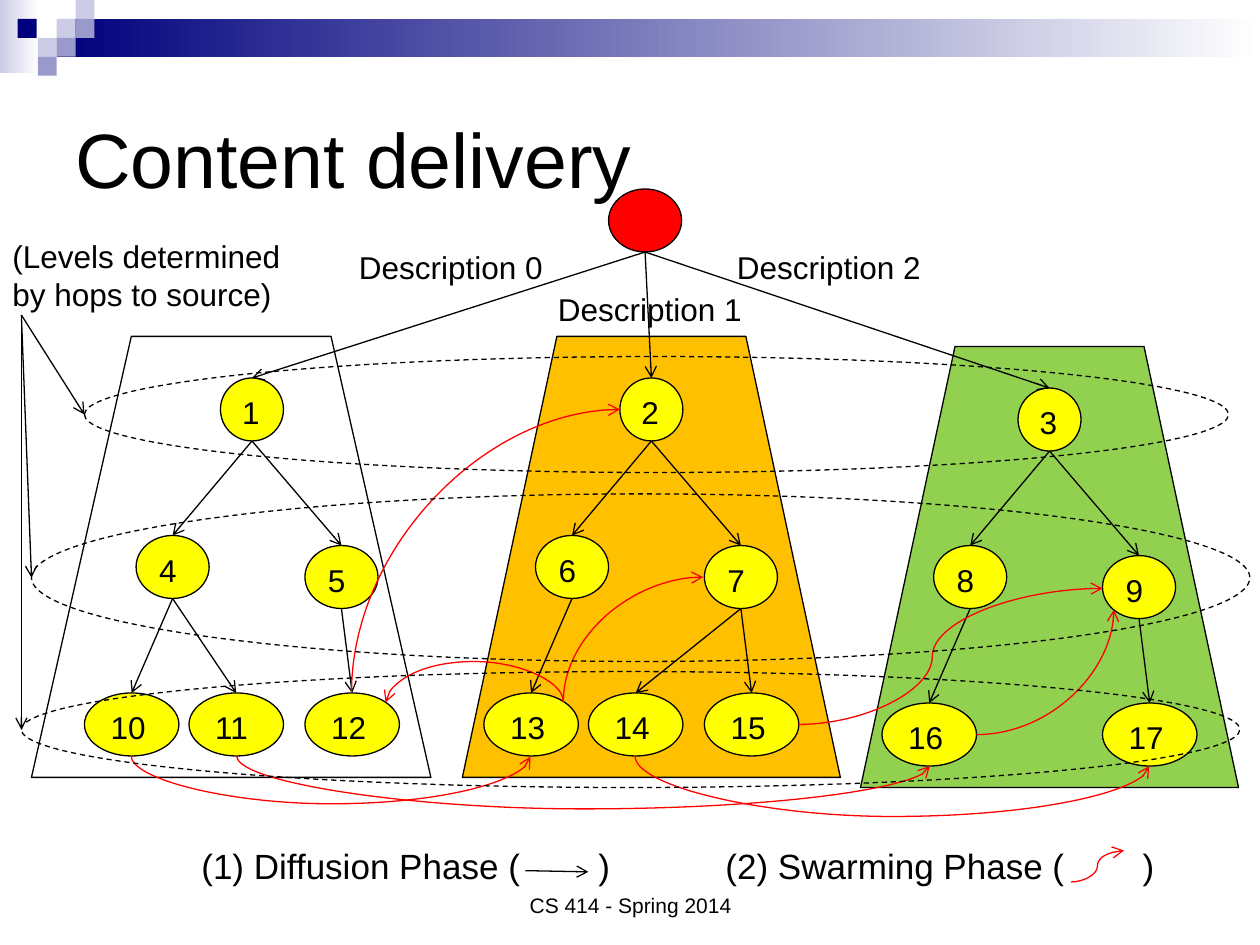
from lxml import etree
from pptx import Presentation
from pptx.dml.color import RGBColor
from pptx.enum.dml import MSO_LINE
from pptx.enum.shapes import MSO_CONNECTOR, MSO_SHAPE
from pptx.enum.text import MSO_ANCHOR, PP_ALIGN
from pptx.oxml.ns import qn
from pptx.util import Inches, Pt

RECT, OVAL, TRAPEZOID = MSO_SHAPE.RECTANGLE, MSO_SHAPE.OVAL, MSO_SHAPE.TRAPEZOID
STRAIGHT, CURVE = MSO_CONNECTOR.STRAIGHT, MSO_CONNECTOR.CURVE
TOP, MIDDLE, BOTTOM = MSO_ANCHOR.TOP, MSO_ANCHOR.MIDDLE, MSO_ANCHOR.BOTTOM
LEFT, CENTER = PP_ALIGN.LEFT, PP_ALIGN.CENTER
DASH = MSO_LINE.DASH

COLORS = {
    "black": "000000", "white": "FFFFFF", "red": "FF0000", "yellow": "FFFF00",
    "orange": "FFC000", "green": "92D050",
    "navy": "00007D", "lilac": "CCCCE6", "violet": "9999CC",
}


def rgb(name):
    return RGBColor.from_string(COLORS[name])


def write(tf, text, size=18, align=LEFT, anchor=TOP, wrap=True, tabs=()):
    tf.word_wrap = wrap
    tf.vertical_anchor = anchor
    p = tf.paragraphs[0]
    p.alignment = align
    if tabs:
        stops = etree.SubElement(p._p.get_or_add_pPr(), qn("a:tabLst"))
        for pos in tabs:
            etree.SubElement(stops, qn("a:tab"), pos=str(Inches(pos)), algn="l")
    r = p.add_run()
    r.text = text
    r.font.name, r.font.size = "Arial", Pt(size)
    r.font.color.rgb = rgb("black")


class Canvas:
    """The current slide and the style of what is drawn on it."""
    line_width = Pt(0.75)

    def __init__(self, slide):
        self.shapes = slide.shapes

    def shape(self, kind, x, y, w, h, fill=None, line="black", dash=None):
        s = self.shapes.add_shape(kind, Inches(x), Inches(y), Inches(w), Inches(h))
        s.shadow.inherit = False
        if fill:
            s.fill.solid()
            s.fill.fore_color.rgb = rgb(fill)
        else:
            s.fill.background()
        if line:
            s.line.color.rgb = rgb(line)
            s.line.width = self.line_width
        else:
            s.line.fill.background()
        if dash:
            s.line.dash_style = dash
        return s

    def gradient(self, x, y, w, h, start, end):
        s = self.shape(RECT, x, y, w, h, line=None)
        s.fill.gradient()
        s.fill.gradient_angle = 0
        for stop, name in zip(s.fill.gradient_stops, (start, end)):
            stop.color.rgb = rgb(name)

    def text(self, x, y, w, h, text, **fmt):
        s = self.shapes.add_textbox(Inches(x), Inches(y), Inches(w), Inches(h))
        write(s.text_frame, text, **fmt)

    def node(self, x, y, w, label):
        s = self.shape(OVAL, x, y, w, 0.5, "yellow")
        write(s.text_frame, label)
        return s

    def arrow(self, start, end, color="black", kind=STRAIGHT):
        c = self.shapes.add_connector(kind, *(Inches(v) for v in (*start, *end)))
        c.line.color.rgb = rgb(color)
        c.line.width = self.line_width
        etree.SubElement(c.line._get_or_add_ln(), qn("a:tailEnd"), type="arrow")
        etree.SubElement(c._element.spPr, qn("a:effectLst"))
        return c

    def link(self, parent, child):
        """Straight arrow from the bottom of parent to the top of child."""
        start = (parent.left + parent.width / 2, parent.top + parent.height)
        end = (child.left + child.width / 2, child.top)
        c = self.arrow(*([v / Inches(1) for v in pt] for pt in (start, end)))
        c.end_connect(child, 0)

    def curve(self, start, end, vertical=False, reach=None, bend=False):
        """Red curve; reach is how far it runs before turning, bend turns once."""
        (x1, y1), (x2, y2) = start, end
        run = x2 - x1
        if vertical:
            # Lay the curve out sideways, then turn it by 90 degrees.
            run, rise = (y2 - y1) or 0.01, x1 - x2
            cx, cy = (x1 + x2) / 2, (y1 + y2) / 2
            start = (cx - run / 2, cy - rise / 2)
            end = (cx + run / 2, cy + rise / 2)
        c = self.arrow(start, end, "red", CURVE)
        sp_pr = c._element.spPr
        if vertical:
            sp_pr.find(qn("a:xfrm")).set("rot", "5400000")
        geom = sp_pr.find(qn("a:prstGeom"))
        if bend:
            geom.set("prst", "curvedConnector2")
        elif reach:
            etree.SubElement(geom.find(qn("a:avLst")), qn("a:gd"), name="adj1",
                             fmla=f"val {round(reach / run * 100000)}")


def draw_header(cv):
    cv.gradient(0, 0, 0.31, 0.58, "lilac", "white")
    cv.gradient(0.45, 0.15, 9.55, 0.3, "navy", "white")
    for x, y, fill in [(0.45, 0.15, "lilac"), (0.6, 0, "lilac"), (0.6, 0.15, "violet"),
                       (0.3, 0.3, "lilac"), (0.14, 0.15, "navy"),
                       (0.45, 0.3, "violet"), (0.3, 0.45, "violet")]:
        cv.shape(RECT, x, y, 0.15, 0.15, fill, line=None)


def draw_tree(cv, x, y, area, labels, middle_parent=None):
    """One delivery tree with its root at x, y; area is left, width, fill."""
    left, width, fill = area
    cv.shape(TRAPEZOID, left, y - 0.33, width, 3.5, fill)
    labels = iter(labels)
    root = cv.node(x, y, 0.5, next(labels))
    inner = [cv.node(x - 0.67, y + 1.25, 0.58, next(labels)),
             cv.node(x + 0.67, y + 1.33, 0.58, next(labels))]
    for child in inner:
        cv.link(root, child)
    for dx, parent in [(-1.08, 0), (-0.25, middle_parent), (0.67, 1)]:
        if parent is not None:
            cv.link(inner[parent], cv.node(x + dx, y + 2.5, 0.75, next(labels)))
    return root


def main():
    prs = Presentation()
    prs.slide_width, prs.slide_height = Inches(10), Inches(7.5)
    cv = Canvas(prs.slides.add_slide(prs.slide_layouts[6]))

    draw_header(cv)
    cv.text(0.5, 0.5, 9, 1.5, "Content delivery", size=44, anchor=MIDDLE)
    cv.text(3.42, 6.83, 3.17, 0.5, "CS 414 - Spring 2014", size=12,
            align=CENTER, anchor=BOTTOM)

    # Delivery trees and their common source
    roots = [
        draw_tree(cv, 1.75, 3, (0.25, 3.17, "white"), ["1", "4", "5", "10", "11", "12"], 0),
        draw_tree(cv, 4.92, 3, (3.67, 3, "orange"), ["2", "6", "7", "13", "14", "15"], 1),
        draw_tree(cv, 8.08, 3.08, (6.83, 3, "green"), ["3", "8", "9", "16", "17"]),
    ]
    source = cv.shape(OVAL, 4.83, 1.5, 0.58, 0.5, "red")
    for root in roots:
        cv.link(source, root)
    for x, y, n in [(2.75, 1.92, 0), (5.75, 1.92, 2), (4.33, 2.25, 1)]:
        cv.text(x, y, 1.67, 0.4, f"Description {n}", wrap=False)

    # Swarming links
    cv.curve((1.04, 6), (4.21, 6), vertical=True, reach=0.39)
    cv.curve((1.88, 6), (7.38, 6.08), vertical=True, reach=0.42)
    cv.curve((2.79, 5.5), (4.92, 3.25), vertical=True, bend=True)
    cv.curve((4.47, 5.57), (3.06, 5.57), vertical=True, reach=-0.32)
    cv.curve((4.47, 5.57), (5.58, 4.58), vertical=True, bend=True)
    cv.curve((5.04, 6), (9.12, 6.08), vertical=True, reach=0.48)
    cv.curve((6.33, 5.75), (8.75, 4.67), reach=1.07)
    cv.curve((7.75, 5.83), (8.84, 4.84), bend=True)

    # Levels
    for x, y, w, h in [(0.67, 2.83, 9.08, 0.92), (0.25, 3.92, 9.67, 1.33),
                       (0.17, 5.33, 9.67, 0.92)]:
        cv.shape(OVAL, x, y, w, h, dash=DASH)
        cv.arrow((0.17, 2.5), (x, y + h / 2))
    cv.text(0, 1.83, 2.42, 0.71, "(Levels determined by hops to source)")

    # Legend
    cv.text(1.5, 6.65, 8, 0.44, "(1) Diffusion Phase (\t)\t(2) Swarming Phase (\t)",
            size=20, tabs=(3.15, 4.16, 7.47))
    cv.arrow((4.17, 6.91), (4.67, 6.92))
    cv.curve((8.5, 7), (8.92, 6.75))

    prs.save("out.pptx")


if __name__ == "__main__":
    main()
